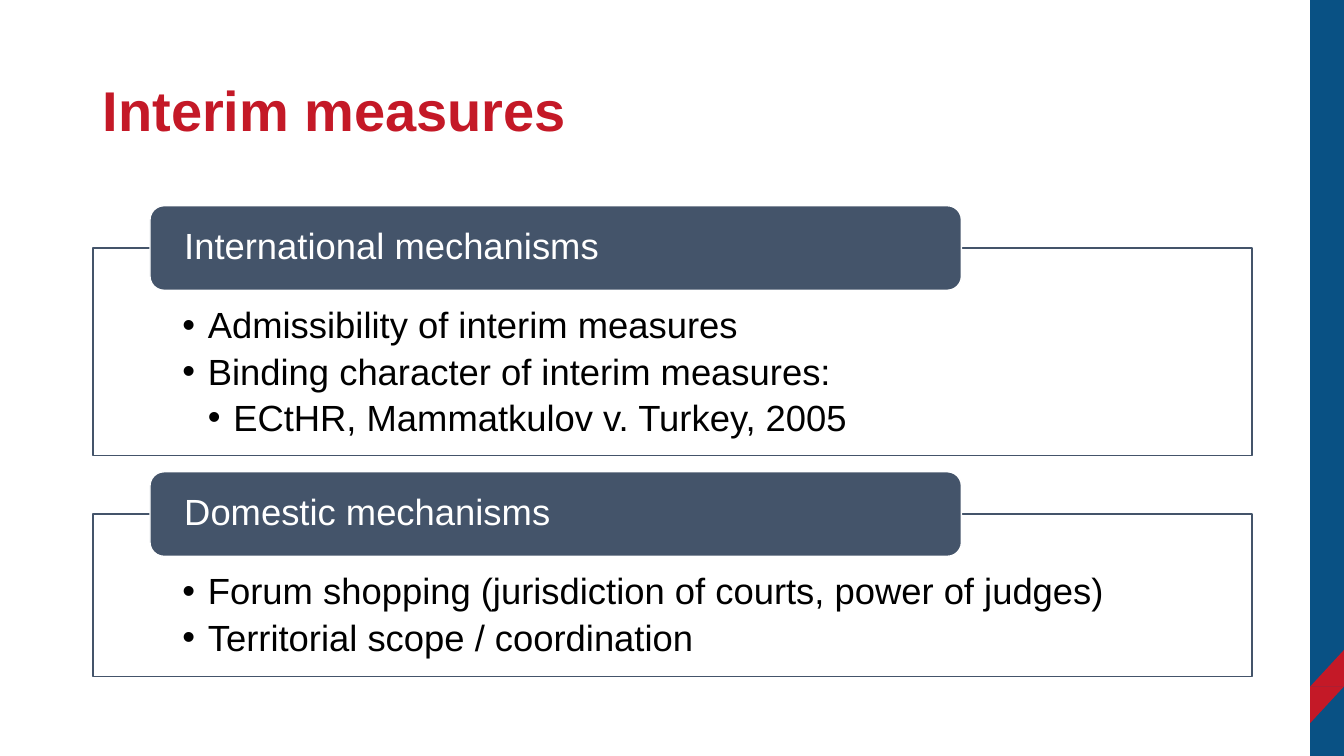
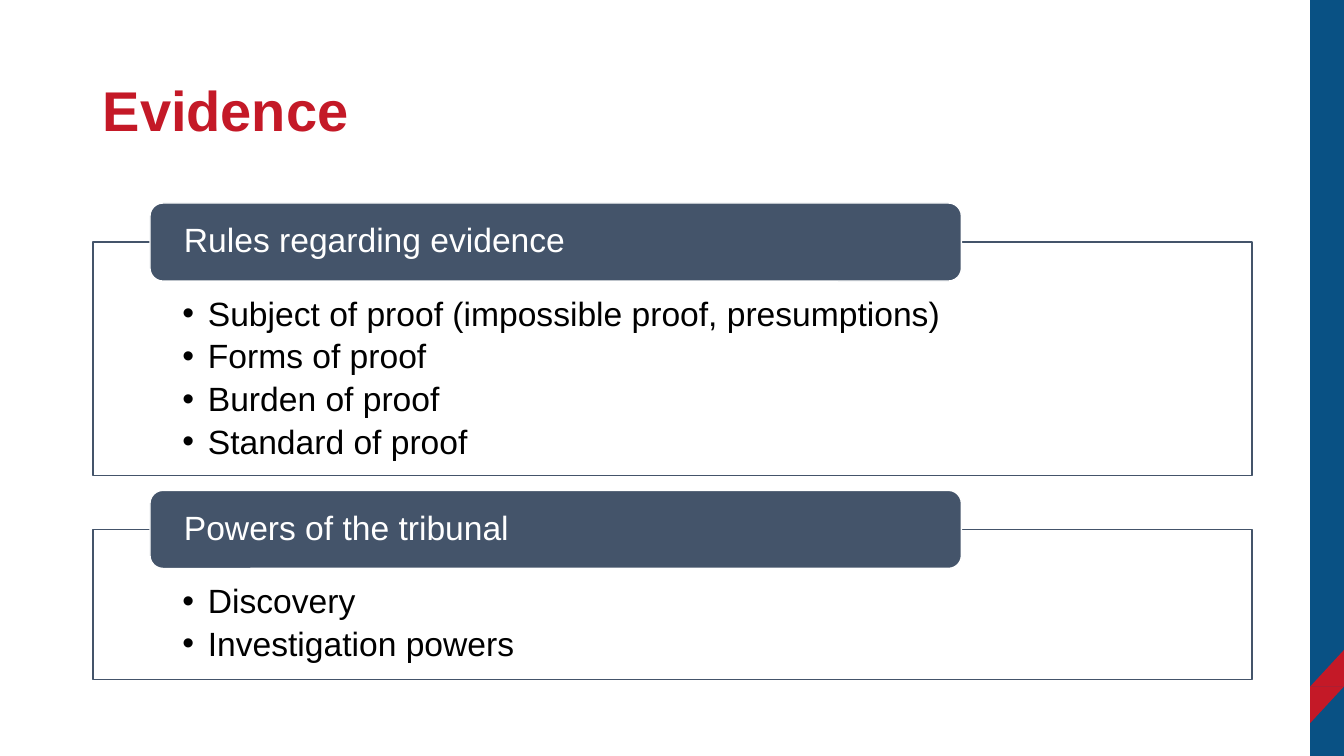
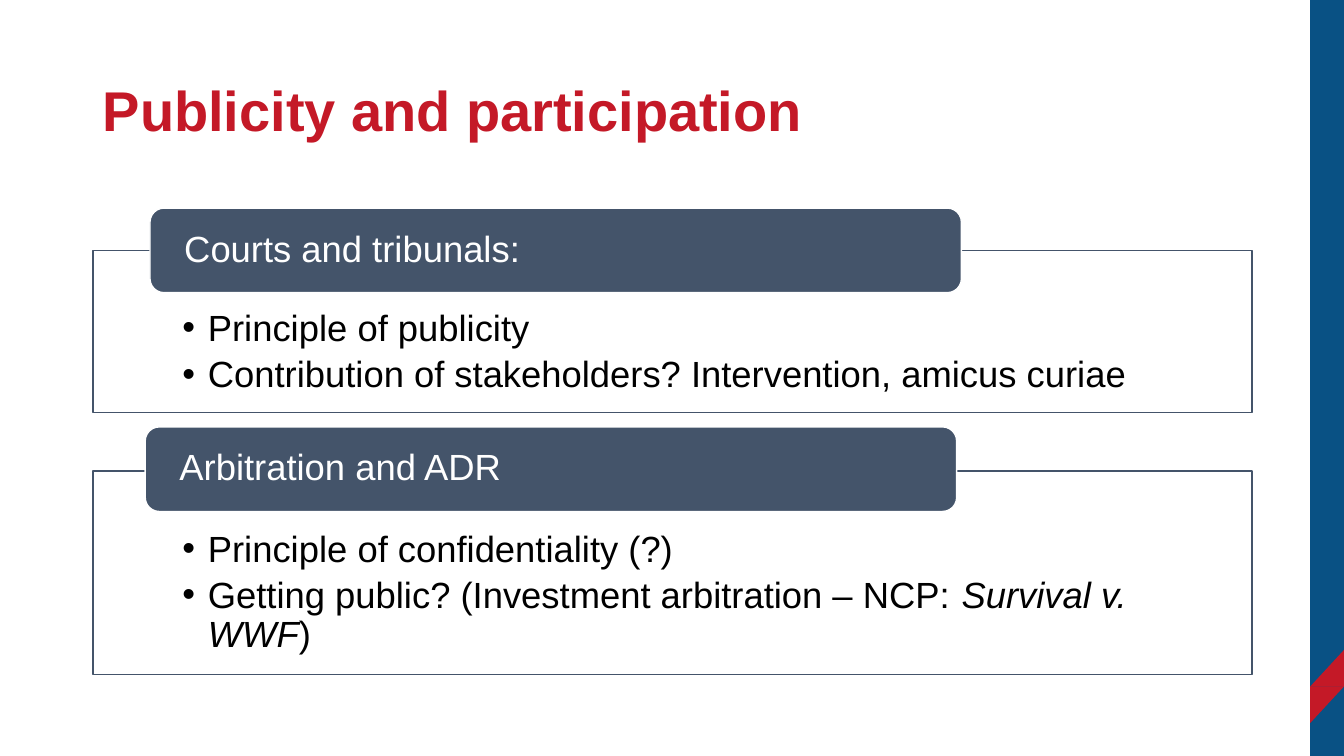
from lxml.etree import SubElement
from pptx import Presentation
from pptx.dml.color import RGBColor
from pptx.enum.shapes import MSO_SHAPE
from pptx.enum.text import MSO_ANCHOR, MSO_AUTO_SIZE, PP_ALIGN
from pptx.oxml.ns import qn
from pptx.util import Cm, Pt

HUES = {
    "red": "C41927",
    "blue": "095184",
    "slate": "44546A",
    "white": "FFFFFF",
    "black": "000000",
}
FONT = "Arial"
WIDE, HIGH = 33.87, 19.05
LEFT, SPAN = 2.34, 29.21
RAIL, RISE = 0.85, 0.92
INDENT = 0.64

DECK = [
    ("Interim measures", 26, 6.25, [
        ("International mechanisms", 5.23, (0, 0), [
            (1, "Admissibility of interim measures"),
            (1, "Binding character of interim measures:"),
            (2, "ECtHR, Mammatkulov v. Turkey, 2005"),
        ]),
        ("Domestic mechanisms", 4.09, (0, 0), [
            (1, "Forum shopping (jurisdiction of courts, power of judges)"),
            (1, "Territorial scope / coordination"),
        ]),
    ]),
    ("Evidence", 24, 6.1, [
        ("Rules regarding evidence", 5.88, (0, 0), [
            (1, "Subject of proof (impossible proof, presumptions)"),
            (1, "Forms of proof"),
            (1, "Burden of proof"),
            (1, "Standard of proof"),
        ]),
        ("Powers of the tribunal", 3.79, (0, 0), [
            (1, "Discovery"),
            (1, "Investigation powers"),
        ]),
    ]),
    ("Publicity and participation", 26, 6.31, [
        ("Courts and tribunals:", 4.09, (0, 0), [
            (1, "Principle of publicity"),
            (1, "Contribution of stakeholders? Intervention, amicus curiae"),
        ]),
        ("Arbitration and ADR", 5.13, (-0.12, -0.05), [
            (1, "Principle of confidentiality (?)"),
            (1, "Getting public? (Investment arbitration – NCP: ",
             "Survival v. WWF", ")"),
        ]),
    ]),
]


def color(name):
    return RGBColor.from_string(HUES[name])


def add_box(slide, kind, area, fill, line=None):
    box = slide.shapes.add_shape(kind, *map(Cm, area))
    box.shadow.inherit = False
    box.fill.solid()
    box.fill.fore_color.rgb = color(fill)
    if line:
        box.line.color.rgb = color(line)
        box.line.width = Pt(1)
    else:
        box.line.fill.background()
    return box


def set_frame(shape, anchor, pads):
    frame = shape.text_frame
    frame.word_wrap = True
    frame.auto_size = MSO_AUTO_SIZE.NONE
    frame.vertical_anchor = anchor
    frame.margin_left, frame.margin_top, frame.margin_right, frame.margin_bottom = map(Cm, pads)
    return frame


def style(para, size, hue, bold=False):
    para.alignment = PP_ALIGN.LEFT
    para.line_spacing = 0.9
    font = para.font
    font.name = FONT
    font.size = Pt(size)
    font.bold = bold
    font.color.rgb = color(hue)


def add_rail(slide, layout):
    left = WIDE - RAIL
    top = 16.38
    parts = [add_box(slide, MSO_SHAPE.RECTANGLE, (left, 0, RAIL, HIGH), "blue")]
    for row, flip in enumerate(("flipH", "flipV")):
        area = (left, top + row * RISE, RAIL, RISE)
        part = add_box(slide, MSO_SHAPE.RIGHT_TRIANGLE, area, "red")
        part.element.spPr.find(qn("a:xfrm")).set(flip, "1")
        parts.append(part)
    for part in parts:
        layout.shapes.element.append(part.element)


def set_title(slide, text):
    title = slide.shapes.title
    title.left, title.top, title.width, title.height = map(Cm, (LEFT, 1.02, SPAN, 3.68))
    frame = set_frame(title, MSO_ANCHOR.MIDDLE, (0.25, 0.13, 0.25, 0.13))
    frame.text = text
    style(frame.paragraphs[0], 40, "red", True)


def add_bullet(para, depth, parts, size):
    para.level = depth
    para.space_before = Pt(0)
    para.space_after = Pt(round(size * 0.19, 1))
    props = para._p.get_or_add_pPr()
    props.set("marL", str(Cm(INDENT * depth)))
    props.set("indent", str(-Cm(INDENT)))
    SubElement(props, qn("a:buFont")).set("typeface", FONT)
    SubElement(props, qn("a:buChar")).set("char", "•")
    for spot, part in enumerate(parts):
        run = para.add_run()
        run.text = part
        if spot % 2:
            run.font.italic = True
    style(para, size, "black")


def add_panel(slide, top, high, items, size):
    panel = add_box(slide, MSO_SHAPE.RECTANGLE, (LEFT, top, SPAN, high), "white", "slate")
    tint = panel.element.spPr.find(qn("a:solidFill"))[0]
    SubElement(tint, qn("a:alpha")).set("val", "90000")
    frame = set_frame(panel, MSO_ANCHOR.TOP, (2.26, size * 0.0577, 2.26, 0.5))
    for spot, (depth, *parts) in enumerate(items):
        para = frame.add_paragraph() if spot else frame.paragraphs[0]
        add_bullet(para, depth, parts, size)


def add_tab(slide, text, top, shift, size):
    high = size * 0.082
    area = (3.78 + shift[0], top - high / 2 + shift[1], 20.45, high)
    tab = add_box(slide, MSO_SHAPE.ROUNDED_RECTANGLE, area, "slate", "white")
    frame = set_frame(tab, MSO_ANCHOR.MIDDLE, (0.76, 0, 0.76, 0))
    frame.text = text
    style(frame.paragraphs[0], size, "white")


def main():
    deck = Presentation()
    deck.slide_width, deck.slide_height = Cm(WIDE), Cm(HIGH)
    layout = deck.slide_layouts[5]
    for page, (title, size, top, panels) in enumerate(DECK):
        slide = deck.slides.add_slide(layout)
        if page == 0:
            add_rail(slide, layout)
        set_title(slide, title)
        for head, high, shift, items in panels:
            add_panel(slide, top, high, items, size)
            add_tab(slide, head, top, shift, size)
            top += high + size * 0.0567
    deck.save("out.pptx")


if __name__ == "__main__":
    main()
